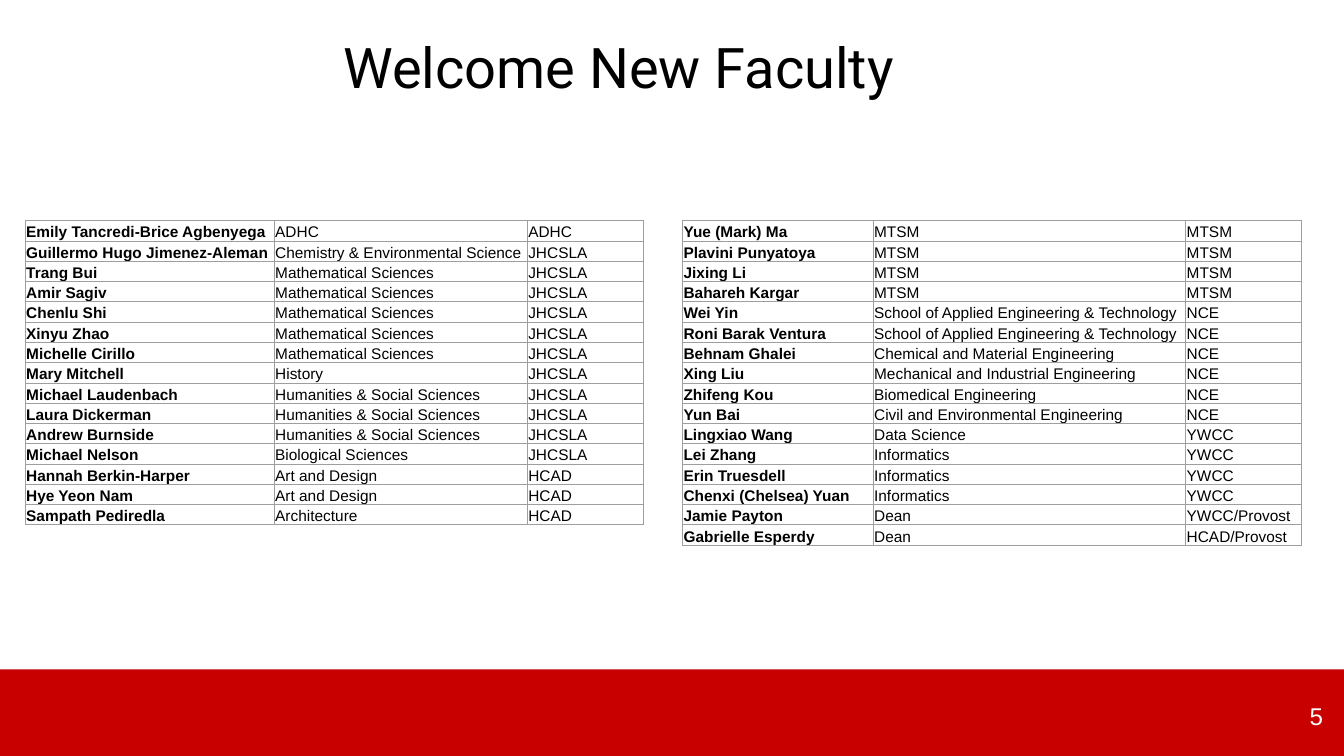
from dataclasses import dataclass

from lxml import etree
from pptx import Presentation
from pptx import util as u
from pptx.dml.color import RGBColor
from pptx.enum import shapes, text
from pptx.oxml.ns import qn

COLORS = {"band": "C80000", "page": "FFFFFF", "ink": "000000", "rule": "9E9E9E"}
RULE_WIDTH = u.Pt(0.75)
TABLE_TOP = 2.19


@dataclass
class Roster:
    left: float
    height: float
    columns: tuple[float, ...]
    members: list[tuple[str, str, str]]


ROSTERS = [
    Roster(0.25, 3.02, (2.47, 2.51, 1.15), [
        ("Emily Tancredi-Brice Agbenyega", "ADHC", "ADHC"),
        ("Guillermo Hugo Jimenez-Aleman", "Chemistry & Environmental Science", "JHCSLA"),
        ("Trang Bui", "Mathematical Sciences", "JHCSLA"),
        ("Amir Sagiv", "Mathematical Sciences", "JHCSLA"),
        ("Chenlu Shi", "Mathematical Sciences", "JHCSLA"),
        ("Xinyu Zhao", "Mathematical Sciences", "JHCSLA"),
        ("Michelle Cirillo", "Mathematical Sciences", "JHCSLA"),
        ("Mary Mitchell", "History", "JHCSLA"),
        ("Michael Laudenbach", "Humanities & Social Sciences", "JHCSLA"),
        ("Laura Dickerman", "Humanities & Social Sciences", "JHCSLA"),
        ("Andrew Burnside", "Humanities & Social Sciences", "JHCSLA"),
        ("Michael Nelson", "Biological Sciences", "JHCSLA"),
        ("Hannah Berkin-Harper", "Art and Design", "HCAD"),
        ("Hye Yeon Nam", "Art and Design", "HCAD"),
        ("Sampath Pediredla", "Architecture", "HCAD"),
    ]),
    Roster(6.77, 3.22, (1.89, 3.1, 1.15), [
        ("Yue (Mark) Ma", "MTSM", "MTSM"),
        ("Plavini Punyatoya", "MTSM", "MTSM"),
        ("Jixing Li", "MTSM", "MTSM"),
        ("Bahareh Kargar", "MTSM", "MTSM"),
        ("Wei Yin", "School of Applied Engineering & Technology", "NCE"),
        ("Roni Barak Ventura", "School of Applied Engineering & Technology", "NCE"),
        ("Behnam Ghalei", "Chemical and Material Engineering", "NCE"),
        ("Xing Liu", "Mechanical and Industrial Engineering", "NCE"),
        ("Zhifeng Kou", "Biomedical Engineering", "NCE"),
        ("Yun Bai", "Civil and Environmental Engineering", "NCE"),
        ("Lingxiao Wang", "Data Science", "YWCC"),
        ("Lei Zhang", "Informatics", "YWCC"),
        ("Erin Truesdell", "Informatics", "YWCC"),
        ("Chenxi (Chelsea) Yuan", "Informatics", "YWCC"),
        ("Jamie Payton", "Dean", "YWCC/Provost"),
        ("Gabrielle Esperdy", "Dean", "HCAD/Provost"),
    ]),
]


def color(name: str) -> RGBColor:
    return RGBColor.from_string(COLORS[name])


def style_text(frame, face: str, size: float, ink: str, align, bold: bool = False) -> None:
    paragraph = frame.paragraphs[0]
    paragraph.alignment = align
    font = paragraph.runs[0].font
    font.name, font.size, font.bold = face, u.Pt(size), bold
    font.color.rgb = color(ink)


def rule_cell(cell) -> None:
    """Draw a thin grey line on all four sides; lines must precede the fill."""
    properties = cell._tc.get_or_add_tcPr()
    for position, side in enumerate(("lnL", "lnR", "lnT", "lnB")):
        line = etree.Element(qn(f"a:{side}"), w=str(int(RULE_WIDTH)))
        solid = etree.SubElement(line, qn("a:solidFill"))
        etree.SubElement(solid, qn("a:srgbClr"), val=COLORS["rule"])
        properties.insert(position, line)


def add_roster(slide, roster: Roster) -> None:
    table = slide.shapes.add_table(
        len(roster.members), len(roster.columns), u.Inches(roster.left), u.Inches(TABLE_TOP),
        u.Inches(sum(roster.columns)), u.Inches(roster.height)).table
    table.first_row = table.horz_banding = False
    for column, width in zip(table.columns, roster.columns):
        column.width = u.Inches(width)
    for row, member in zip(table.rows, roster.members):
        for index, (cell, entry) in enumerate(zip(row.cells, member)):
            cell.margin_left = cell.margin_right = cell.margin_top = u.Inches(0.01)
            cell.margin_bottom = 0
            cell.vertical_anchor = text.MSO_ANCHOR.BOTTOM
            cell.fill.background()
            rule_cell(cell)
            cell.text_frame.text = entry
            style_text(cell.text_frame, "Arial", 11, "ink", text.PP_ALIGN.LEFT, bold=index == 0)


def add_footer(slide) -> None:
    band = slide.shapes.add_shape(
        shapes.MSO_SHAPE.RECTANGLE, 0, u.Inches(6.64), u.Inches(13.33), u.Inches(0.86))
    band.shadow.inherit = False
    band.fill.solid()
    band.fill.fore_color.rgb = color("band")
    band.line.fill.background()

    page_number = slide.shapes.add_textbox(
        u.Inches(12.42), u.Inches(6.82), u.Inches(0.8), u.Inches(0.57)).text_frame
    page_number.word_wrap = True
    page_number.vertical_anchor = text.MSO_ANCHOR.MIDDLE
    page_number.margin_left = page_number.margin_right = u.Inches(0.1)
    page_number.margin_top = page_number.margin_bottom = u.Inches(0.1)
    page_number.text = "5"
    style_text(page_number, "Arial", 17.3, "page", text.PP_ALIGN.RIGHT)


def add_title(slide) -> None:
    title = slide.shapes.title
    title.left, title.top = u.Inches(1.28), u.Inches(0.27)
    title.width, title.height = u.Inches(9.71), u.Inches(1.45)
    title.text_frame.text = "Welcome New Faculty"
    title.text_frame.vertical_anchor = text.MSO_ANCHOR.TOP
    style_text(title.text_frame, "Roboto", 40, "ink", text.PP_ALIGN.CENTER)


def main() -> None:
    deck = Presentation()
    deck.slide_width, deck.slide_height = u.Inches(13.33), u.Inches(7.5)
    slide = deck.slides.add_slide(deck.slide_layouts.get_by_name("Title Only"))
    slide.background.fill.solid()
    slide.background.fill.fore_color.rgb = color("page")
    add_footer(slide)
    add_title(slide)
    for roster in ROSTERS:
        add_roster(slide, roster)
    deck.save("out.pptx")


if __name__ == "__main__":
    main()
